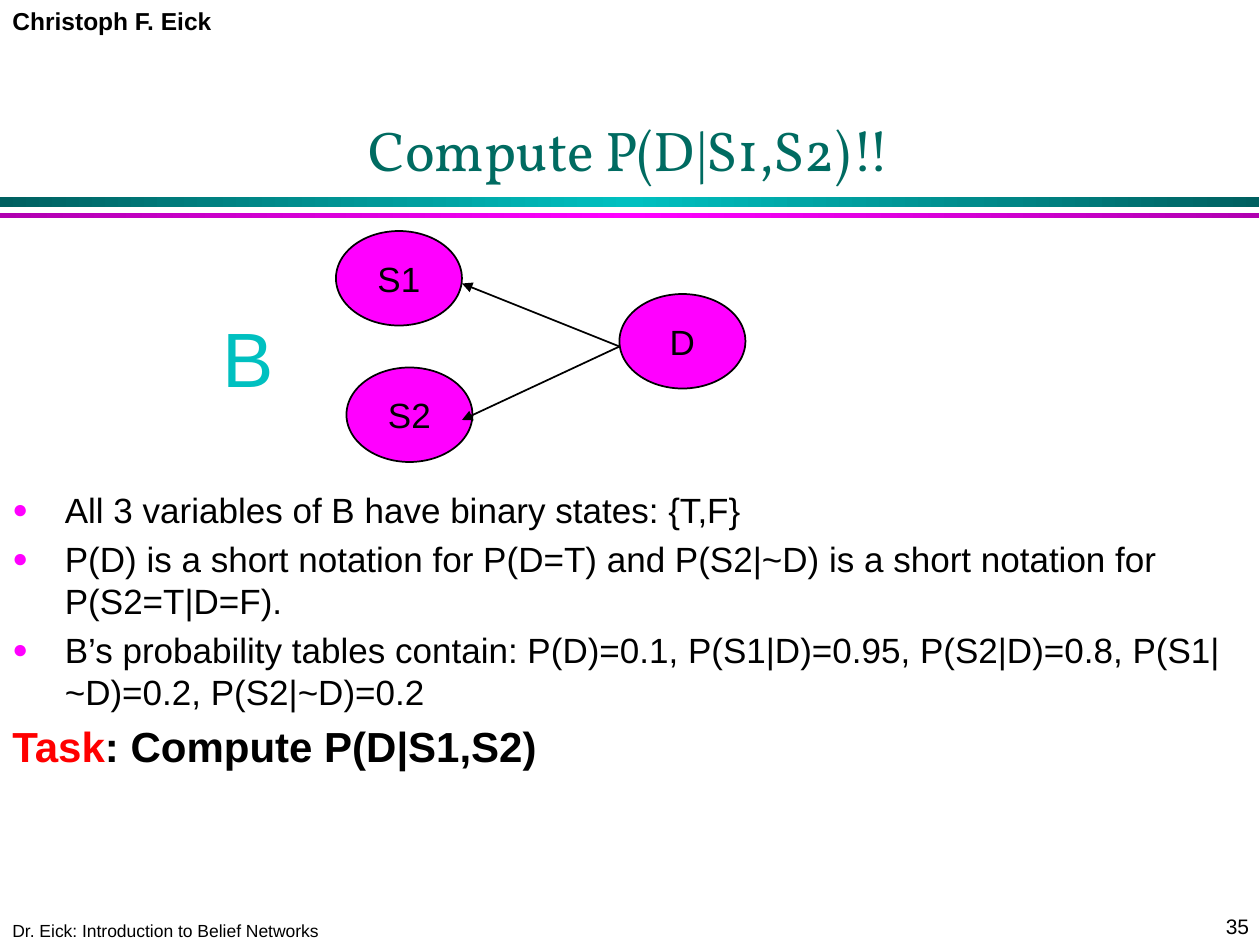
from copy import deepcopy
from dataclasses import dataclass

from pptx import Presentation
from pptx.dml.color import RGBColor as RGB
from pptx.enum.shapes import MSO_CONNECTOR as Link, MSO_SHAPE as Kind
from pptx.enum.text import MSO_ANCHOR as Anchor, MSO_AUTO_SIZE as Fit, PP_ALIGN as Align
from pptx.oxml.ns import qn
from pptx.oxml.xmlchemy import OxmlElement as Tag
from pptx.util import Pt


@dataclass(frozen=True)
class Theme:
    sans: str = "Arial"
    serif: str = "Vollkorn"
    black: str = "000000"
    red: str = "FF0000"
    pink: str = "FF00FF"
    plum: str = "B000B0"
    aqua: str = "00C0C0"
    teal: str = "006060"
    green: str = "006B61"
    tiny: int = 10
    small: int = 12
    note: int = 14
    text: int = 20
    task: int = 24
    head: int = 32
    mark: int = 44


T = Theme()


@dataclass(frozen=True)
class Box:
    left: float
    top: float
    width: float
    height: float

    def args(self) -> list:
        return [Pt(v) for v in (self.left, self.top, self.width, self.height)]


@dataclass(frozen=True)
class Run:
    text: str
    size: int = T.text
    color: str = T.black
    bold: bool = False
    face: str = T.sans


@dataclass(frozen=True)
class Label:
    box: Box
    run: Run
    wrap: bool = False


@dataclass(frozen=True)
class Band:
    box: Box
    edge: str
    core: str


@dataclass(frozen=True)
class Node:
    name: str
    left: float
    top: float


@dataclass(frozen=True)
class Item:
    runs: tuple
    gap: float = 4
    dot: bool = True


BANDS = [
    Band(Box(0, 112.5, 719.5, 5.75), T.teal, T.aqua),
    Band(Box(0, 121.5, 719.5, 3), T.plum, T.pink),
]
LABELS = [
    Label(Box(0, 0, 129, 24), Run("Christoph F. Eick", T.note, bold=True)),
    Label(Box(0, 522, 242, 19.4),
          Run("Dr. Eick: Introduction to Belief Networks", T.tiny), True),
    Label(Box(693.4, 518.4, 28.8, 21.6), Run("35", T.small)),
    Label(Box(120, 174, 44, 60), Run("B", T.mark, T.aqua)),
]
TITLE = Run("Compute P(D|S1,S2)!!", T.head, T.green, face=T.serif)
ITEMS = [
    Item((Run("All 3 variables of B have binary states: {T,F}"),), gap=0),
    Item((Run("P(D) is a short notation for P(D=T) and P(S2|~D) is a short "
              "notation for P(S2=T|D=F)."),)),
    Item((Run("B’s probability tables contain: P(D)=0.1, P(S1|D)=0.95, "
              "P(S2|D)=0.8, P(S1|~D)=0.2, P(S2|~D)=0.2"),)),
    Item((Run("Task", T.task, T.red, True),
          Run(": Compute P(D|S1,S2)", T.task, bold=True)), gap=4.8, dot=False),
]
NODES = [Node("S1", 192, 132), Node("S2", 198, 210), Node("D", 354, 168)]
START = (354, 198)
ENDS = [(264, 162), (264, 240)]


def apply(obj, fmt: dict) -> None:
    for key, val in fmt.items():
        setattr(obj, key, val)


def write(para, run: Run) -> None:
    part = para.add_run()
    part.text = run.text
    apply(part.font, {"name": run.face, "size": Pt(run.size), "bold": run.bold})
    part.font.color.rgb = RGB.from_string(run.color)


def frame(slide, box: Box, **fmt):
    """Add a text box and return its text frame."""
    body = slide.shapes.add_textbox(*box.args()).text_frame
    apply(body, {"word_wrap": True, **fmt})
    return body


def draw_band(slide, band: Band) -> None:
    bar = slide.shapes.add_shape(Kind.RECTANGLE, *band.box.args())
    bar.shadow.inherit = False
    bar.line.fill.background()
    bar.fill.gradient()
    bar.fill.gradient_angle = 0
    stops = next(bar._element.iter(qn("a:gsLst")))
    stops.append(deepcopy(stops[0]))
    looks = [(0, band.edge), (0.5, band.core), (1, band.edge)]
    for stop, (spot, color) in zip(bar.fill.gradient_stops, looks):
        stop.position = spot
        stop.color.rgb = RGB.from_string(color)


def draw_label(slide, label: Label) -> None:
    body = frame(slide, label.box, word_wrap=label.wrap,
                 auto_size=Fit.SHAPE_TO_FIT_TEXT)
    write(body.paragraphs[0], label.run)


def draw_node(slide, node: Node) -> None:
    oval = slide.shapes.add_shape(Kind.OVAL, *Box(node.left, node.top, 72, 54).args())
    oval.shadow.inherit = False
    oval.fill.solid()
    oval.fill.fore_color.rgb = RGB.from_string(T.pink)
    oval.line.color.rgb = RGB.from_string(T.black)
    oval.line.width = Pt(1)
    body = oval.text_frame
    apply(body, {"word_wrap": False, "vertical_anchor": Anchor.MIDDLE})
    body.paragraphs[0].alignment = Align.CENTER
    write(body.paragraphs[0], Run(node.name))


def draw_arrow(slide, start: tuple, end: tuple) -> None:
    line = slide.shapes.add_connector(Link.STRAIGHT, *[Pt(v) for v in start + end])
    line.line.color.rgb = RGB.from_string(T.black)
    line.line.width = Pt(1)
    tip = Tag("a:tailEnd")
    tip.set("type", "triangle")
    line.line._get_or_add_ln().append(tip)
    line._element.spPr.append(Tag("a:effectLst"))


def add_dot(para) -> None:
    """Give the paragraph a small pink bullet."""
    props = para._p.get_or_add_pPr()
    tint, size, face, mark = [
        Tag(f"a:{name}") for name in ("buClr", "buSzPct", "buFont", "buChar")]
    color = Tag("a:srgbClr")
    color.set("val", T.pink)
    tint.append(color)
    size.set("val", "75000")
    face.set("typeface", T.sans)
    mark.set("char", "●")
    props.extend([tint, size, face, mark])


def draw_list(slide, box: Box, items: list) -> None:
    body = frame(slide, box)
    for num, item in enumerate(items):
        para = body.add_paragraph() if num else body.paragraphs[0]
        props = para._p.get_or_add_pPr()
        props.set("marL", str(Pt(30)))
        props.set("indent", str(Pt(-30)))
        para.space_before = Pt(item.gap)
        if item.dot:
            add_dot(para)
        for run in item.runs:
            write(para, run)


def main() -> None:
    deck = Presentation()
    apply(deck, {"slide_width": Pt(720), "slide_height": Pt(540)})
    slide = deck.slides.add_slide(deck.slide_layouts[6])
    for band in BANDS:
        draw_band(slide, band)
    title = frame(slide, Box(54, 48, 612, 60), vertical_anchor=Anchor.BOTTOM)
    title.paragraphs[0].alignment = Align.CENTER
    write(title.paragraphs[0], TITLE)
    draw_list(slide, Box(0, 275.5, 720, 186), ITEMS)
    for node in NODES:
        draw_node(slide, node)
    for end in ENDS:
        draw_arrow(slide, START, end)
    for label in LABELS:
        draw_label(slide, label)
    deck.save("out.pptx")


if __name__ == "__main__":
    main()
